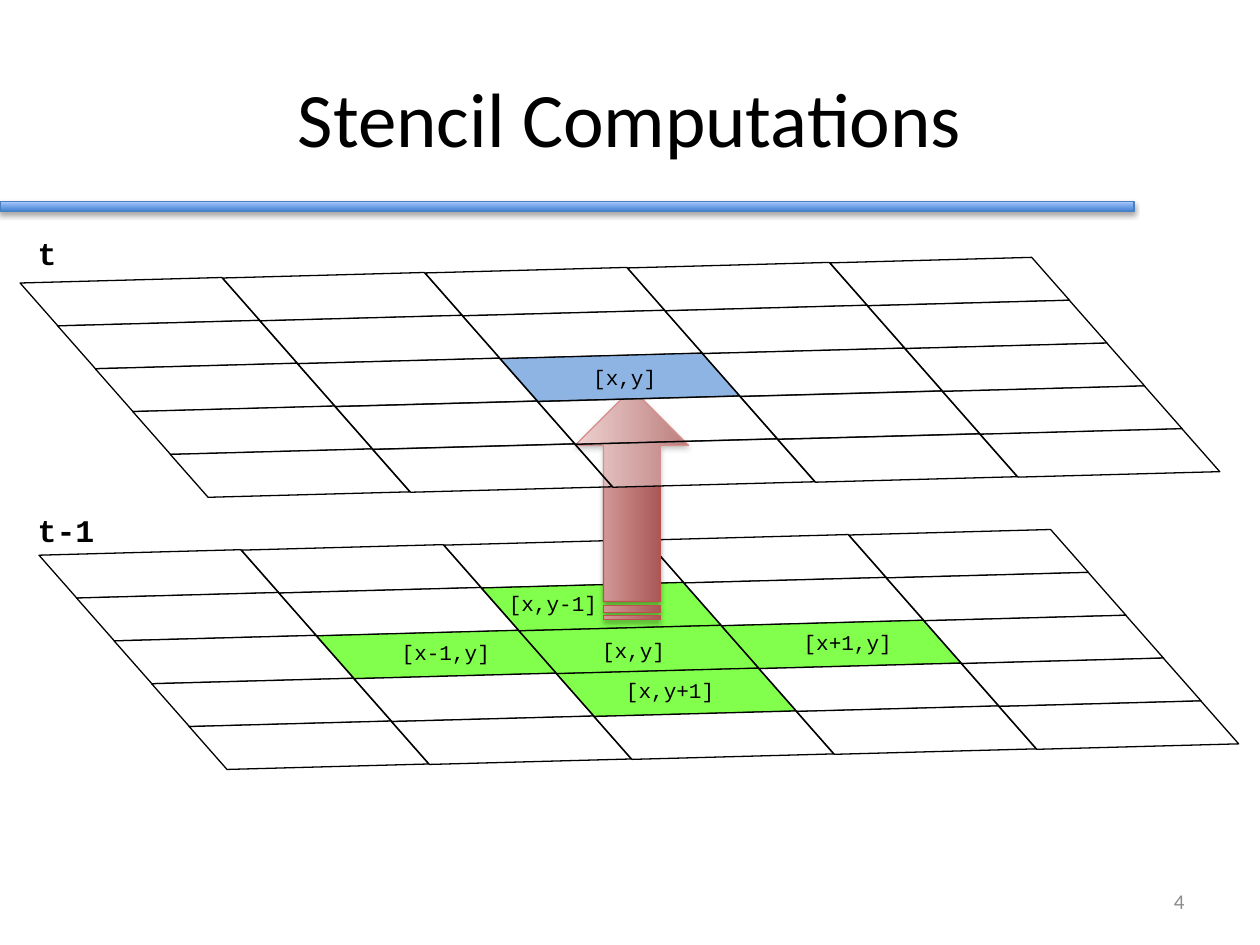
from pptx import Presentation, util as u
from pptx.dml.color import RGBColor
from pptx.enum import shapes, text
from pptx.oxml import parse_xml
from pptx.oxml.ns import nsdecls, qn

COLORS = {
    "black": "000000", "white": "FFFFFF", "gray": "8C8C8C",
    "green": "81FF4C", "blue": "8EB4E3",
    "bar_dark": "3F80CE", "bar_light": "A4C4FF", "bar_line": "4B7EBC",
    "arrow_dark": "953734", "arrow_light": "E6B9B8", "arrow_line": "C0504D",
}
WIDTH, HEIGHT = 10, 7.5
SIZE = 5
CELL = (1.48, 1.23)
COLUMN_STEP = (1.607, -0.04)
ROW_STEP = (0.298, 0.34)
CELL_ROTATION = 48.6
CELL_SKEW = 0.834

PREVIOUS = {
    "origin": (0.52, 3.94),
    "colored": {cell: "green" for cell in [(2, 1), (1, 2), (2, 2), (3, 2), (2, 3)]},
    "translucent": [],
}
CURRENT = {
    "origin": (0.37, 1.78),
    "colored": {(2, 2): "blue"},
    "translucent": [(column, row) for column in (1, 2, 3) for row in (3, 4)],
}
PREVIOUS_LABELS = [
    ("[x,y-1]", 3.94, 4.64, 0.9),
    ("[x+1,y]", 6.28, 4.95, 0.9),
    ("[x-1,y]", 3.09, 5.03, 0.9),
    ("[x,y+1]", 4.87, 5.33, 0.9),
    ("[x,y]", 4.68, 5.01, 0.7),
]
CURRENT_LABEL = ("[x,y]", 4.61, 2.84, 0.7)
TIME_LABELS = [("t", 0.2, 1.81, 0.66), ("t-1", 0.2, 4.01, 0.85)]

presentation = Presentation()
presentation.slide_width = u.Inches(WIDTH)
presentation.slide_height = u.Inches(HEIGHT)
slide = presentation.slides.add_slide(presentation.slide_layouts[6])


def color(name):
    return RGBColor.from_string(COLORS[name])


def add_shape(kind, box, line):
    shape = slide.shapes.add_shape(kind, *map(u.Inches, box))
    shape.shadow.inherit = False
    shape.line.color.rgb = color(line)
    shape.line.width = u.Pt(0.75)
    return shape


def add_gradient_shape(kind, box, start, end, line):
    shape = add_shape(kind, box, line)
    shape.fill.gradient()
    shape.fill.gradient_angle = 90
    for stop, name, position in zip(shape.fill.gradient_stops, (start, end), (0, 1)):
        stop.color.rgb = color(name)
        stop.position = position
    effects = shape._element.spPr.find(qn("a:effectLst"))
    effects.append(parse_xml(
        f'<a:outerShdw {nsdecls("a")} blurRad="{u.Pt(3.1)}" dist="{u.Pt(1.8)}" '
        'dir="5400000" rotWithShape="0"><a:srgbClr val="000000">'
        '<a:alpha val="35000"/></a:srgbClr></a:outerShdw>'))
    return shape


def add_text(content, box, size=12, font="Courier New", fill="black", bold=False,
             align=text.PP_ALIGN.LEFT, anchor=text.MSO_ANCHOR.TOP, wrap=True):
    shape = slide.shapes.add_textbox(*map(u.Inches, box))
    frame = shape.text_frame
    frame.word_wrap = wrap
    frame.vertical_anchor = anchor
    paragraph = frame.paragraphs[0]
    paragraph.alignment = align
    run = paragraph.add_run()
    run.text = content
    run.font.size = u.Pt(size)
    run.font.name = font
    run.font.bold = bold
    run.font.color.rgb = color(fill)


def add_plane(plane):
    for row in range(SIZE):
        for column in range(SIZE):
            left, top = (start + column * across + row * down for start, across, down
                         in zip(plane["origin"], COLUMN_STEP, ROW_STEP))
            cell = add_shape(shapes.MSO_SHAPE.PARALLELOGRAM, (left, top, *CELL), "black")
            cell.adjustments[0] = CELL_SKEW
            cell.rotation = CELL_ROTATION
            cell.fill.solid()
            cell.fill.fore_color.rgb = color(plane["colored"].get((column, row), "white"))
            if (column, row) in plane["translucent"]:
                fill_color = cell._element.spPr.find(qn("a:solidFill"))[0]
                fill_color.append(parse_xml(f'<a:alpha {nsdecls("a")} val="36000"/>'))


def add_cell_label(content, left, top, width):
    add_text(content, (left, top, width, 0.31), wrap=False)


add_gradient_shape(shapes.MSO_SHAPE.RECTANGLE, (0, 1.6, 0.9 * WIDTH, 0.08),
                   "bar_dark", "bar_light", "bar_line")
add_plane(PREVIOUS)
for label in PREVIOUS_LABELS:
    add_cell_label(*label)
arrow = add_gradient_shape(shapes.MSO_SHAPE.STRIPED_RIGHT_ARROW, (4.1, 3.55, 1.83, 0.9),
                           "arrow_dark", "arrow_light", "arrow_line")
arrow.rotation = 270
add_plane(CURRENT)
add_text("Stencil Computations", (0.5, 0.3, 0.9 * WIDTH, 1.25), size=44, font="Calibri",
         align=text.PP_ALIGN.CENTER, anchor=text.MSO_ANCHOR.MIDDLE)
add_text("4", (7.17, 6.95, 2.33, 0.4), font="Calibri", fill="gray",
         align=text.PP_ALIGN.RIGHT, anchor=text.MSO_ANCHOR.MIDDLE)
for content, left, top, width in TIME_LABELS:
    add_text(content, (left, top, width, 0.37), size=18, bold=True)
add_cell_label(*CURRENT_LABEL)

presentation.save("out.pptx")
